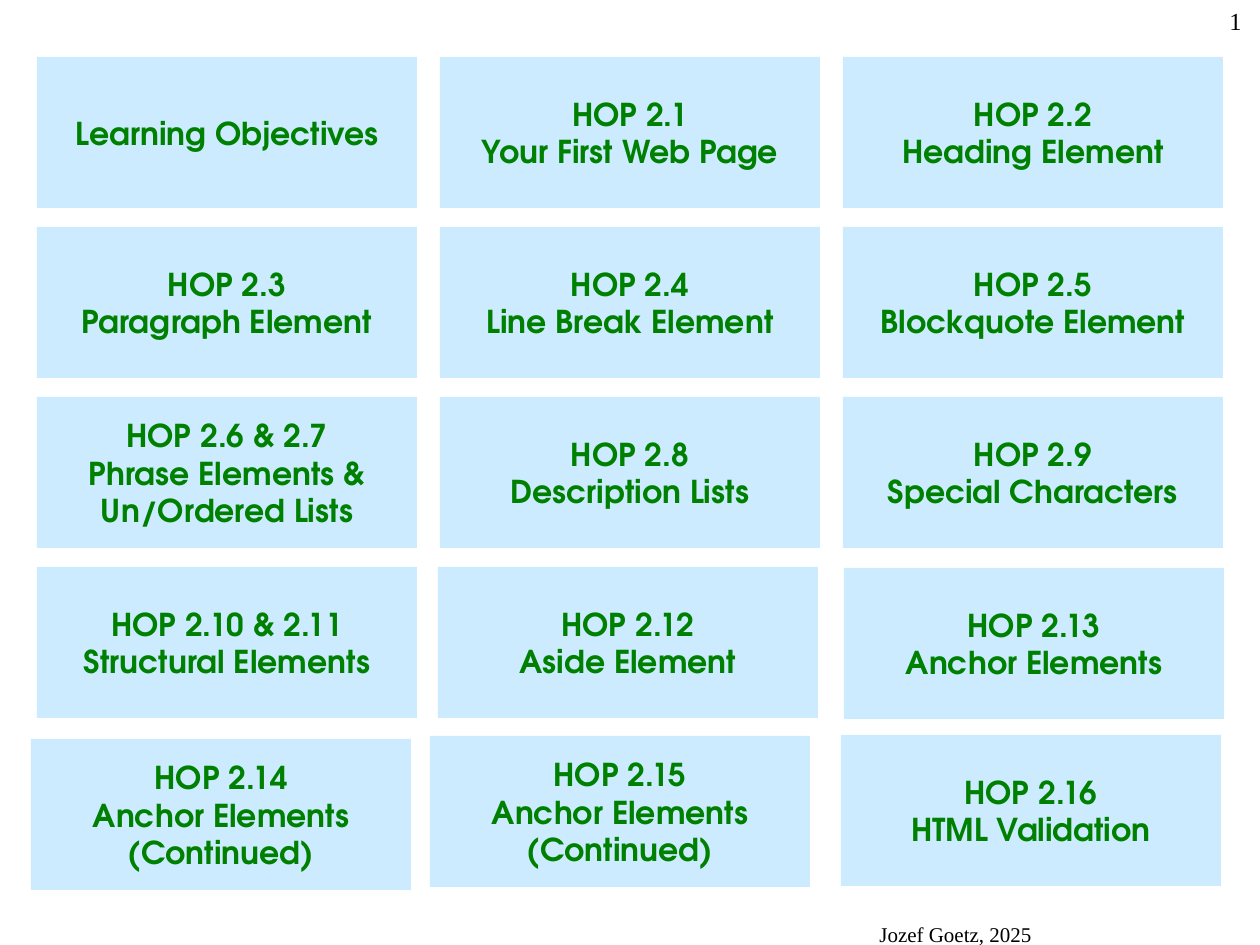
"""Build a slide with a grid of chapter topics."""
import pptx
import pptx.dml.color
import pptx.enum.shapes
import pptx.enum.text
import pptx.util

PX = 914400 // 126
COLORS = {"tile": "CCEBFF", "topic": "008000", "caption": "000000"}
TOPIC_FONT = "TeX Gyre Adventor"
CAPTION_FONT = "Times New Roman"
ALIGN = pptx.enum.text.PP_ALIGN

GRID_LEFT, GRID_TOP = 37, 57
COLUMN_STEP, ROW_STEP = 403, 170
TILE_WIDTH, TILE_HEIGHT = 380, 151

TOPICS = [
    [["Learning Objectives"],
     ["HOP 2.1", "Your First Web Page"],
     ["HOP 2.2", "Heading Element"]],
    [["HOP 2.3", "Paragraph Element"],
     ["HOP 2.4", "Line Break Element"],
     ["HOP 2.5", "Blockquote Element"]],
    [["HOP 2.6 & 2.7", "Phrase Elements & Un/Ordered Lists"],
     ["HOP 2.8", "Description Lists"],
     ["HOP 2.9", "Special Characters"]],
    [["HOP 2.10 & 2.11", "Structural Elements"],
     ["HOP 2.12", "Aside Element"],
     ["HOP 2.13", "Anchor Elements"]],
    [["HOP 2.14", "Anchor Elements", "(Continued)"],
     ["HOP 2.15", "Anchor Elements", "(Continued)"],
     ["HOP 2.16", "HTML Validation"]],
]
NUDGES = {(3, 1): (-2, 0), (3, 2): (1, 1),
          (4, 0): (-6, 2), (4, 1): (-10, -1), (4, 2): (-2, -2)}


def color(name):
    """Return the named colour."""
    return pptx.dml.color.RGBColor.from_string(COLORS[name])


def box(*lengths):
    """Turn pixel lengths into EMU."""
    return [pptx.util.Emu(length * PX) for length in lengths]


def write_lines(frame, lines, font_name, size, color_name, align, bold=False):
    """Write each line as a paragraph with one styled run."""
    frame.word_wrap = True
    for index, line in enumerate(lines):
        paragraph = frame.add_paragraph() if index else frame.paragraphs[0]
        paragraph.alignment = align
        run = paragraph.add_run()
        run.text = line
        run.font.name = font_name
        run.font.size = pptx.util.Pt(size)
        run.font.bold = bold
        run.font.color.rgb = color(color_name)


def add_tile(slide, left, top, lines):
    """Add one topic tile."""
    tile = slide.shapes.add_shape(
        pptx.enum.shapes.MSO_SHAPE.RECTANGLE,
        *box(left, top, TILE_WIDTH, TILE_HEIGHT))
    tile.shadow.inherit = False
    tile.fill.solid()
    tile.fill.fore_color.rgb = color("tile")
    tile.line.fill.background()
    tile.text_frame.vertical_anchor = pptx.enum.text.MSO_ANCHOR.MIDDLE
    write_lines(tile.text_frame, lines, TOPIC_FONT, 18, "topic", ALIGN.CENTER, True)


def add_caption(slide, bounds, text, size, align):
    """Add a line of small text at the slide's edge."""
    caption = slide.shapes.add_textbox(*box(*bounds))
    write_lines(caption.text_frame, [text], CAPTION_FONT, size, "caption", align)


def main():
    """Build and save the slide."""
    deck = pptx.Presentation()
    deck.slide_width, deck.slide_height = box(1260, 945)
    slide = deck.slides.add_slide(deck.slide_layouts[6])
    add_caption(slide, (756, 915, 399, 30), "Jozef Goetz, 2025", 12, ALIGN.CENTER)
    add_caption(slide, (998, 0, 256, 63), "1", 14, ALIGN.RIGHT)
    for row, topics in enumerate(TOPICS):
        for column, lines in enumerate(topics):
            shift_x, shift_y = NUDGES.get((row, column), (0, 0))
            add_tile(slide, GRID_LEFT + column * COLUMN_STEP + shift_x,
                     GRID_TOP + row * ROW_STEP + shift_y, lines)
    deck.save("out.pptx")


if __name__ == "__main__":
    main()
